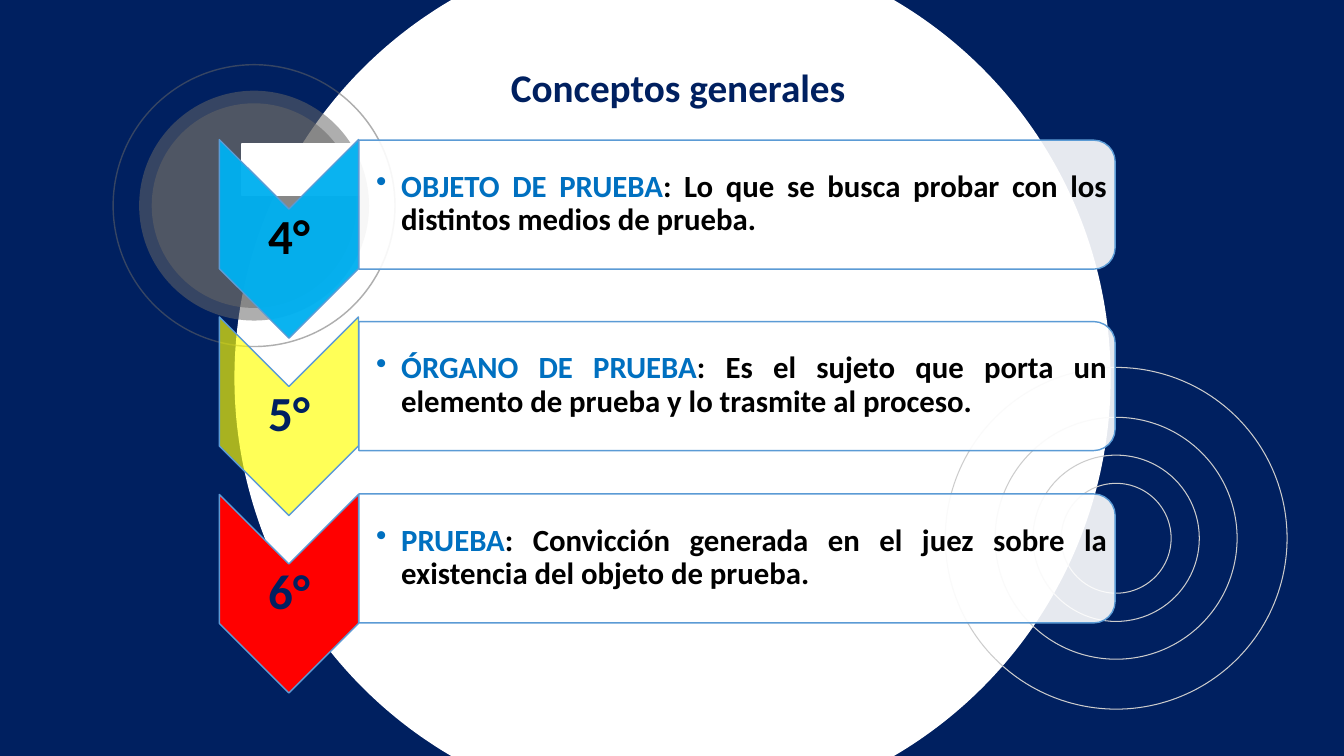
import pptx
import pptx.dml.color
import pptx.enum.shapes
import pptx.enum.text
import pptx.oxml
import pptx.oxml.ns
import pptx.util

PX = 9144  # 100 px to the inch

RGB = pptx.dml.color.RGBColor
NAVY = RGB(0x00, 0x20, 0x60)
WHITE = RGB(0xFF, 0xFF, 0xFF)
BLACK = RGB(0x00, 0x00, 0x00)
GRAY = RGB(0x66, 0x66, 0x66)
RING_GRAY = RGB(0xCC, 0xCC, 0xCC)
SKY = RGB(0x00, 0xB0, 0xF0)
YELLOW = RGB(0xFF, 0xFF, 0x00)
RED = RGB(0xFF, 0x00, 0x00)
TERM_BLUE = RGB(0x00, 0x70, 0xC0)
EDGE_BLUE = RGB(0x5B, 0x9B, 0xD5)

KIND = pptx.enum.shapes.MSO_SHAPE
ALIGN = pptx.enum.text.PP_ALIGN
ANCHOR = pptx.enum.text.MSO_ANCHOR

RING_CENTER = (1107, 534)
RING_DIAMETERS = (339, 165, 240, 109)
DISC_CENTER = (252, 204)
DISC_DIAMETERS = (228, 203)
CHEVRON_TOP, CHEVRON_STEP = 168, 176

# number, number colour, chevron colour, opacity, top of the bar, term, meaning
CONCEPTS = (
    ("4°", BLACK, SKY, 96, 139, "OBJETO DE PRUEBA",
     ": Lo que se busca probar con los distintos medios de prueba."),
    ("5°", NAVY, YELLOW, 66, 319, "ÓRGANO DE PRUEBA",
     ": Es el sujeto que porta un elemento de prueba y lo trasmite al proceso."),
    ("6°", NAVY, RED, 100, 490, "PRUEBA",
     ": Convicción generada en el juez sobre la existencia del objeto de prueba."),
)


def px(length):
    return pptx.util.Emu(round(length * PX))


def set_formats(target, formats):
    for name, value in formats.items():
        setattr(target, name, value)


def add_figure(slide, kind, place, fill=None, opacity=100, line=None,
               weight=1, rotation=0):
    figure = slide.shapes.add_shape(kind, *map(px, place))
    figure.shadow.inherit = False
    figure.rotation = rotation
    if fill is None:
        figure.fill.background()
    else:
        figure.fill.solid()
        figure.fill.fore_color.rgb = fill
    if opacity < 100:
        color = figure.fill._xPr.find(".//" + pptx.oxml.ns.qn("a:srgbClr"))
        alpha = pptx.oxml.parse_xml(
            f'<a:alpha {pptx.oxml.ns.nsdecls("a")} val="{opacity * 1000}"/>')
        color.append(alpha)
    if line is None:
        figure.line.fill.background()
    else:
        figure.line.color.rgb = line
        figure.line.width = pptx.util.Pt(weight)
    return figure


def add_circle(slide, center, diameter, kind=KIND.OVAL, **look):
    left, top = (middle - diameter / 2 for middle in center)
    return add_figure(slide, kind, (left, top, diameter, diameter), **look)


def add_text(slide, place, spans, size, align, anchor, margins):
    """Add one bold paragraph; spans are (text, colour) pairs."""
    box = slide.shapes.add_textbox(*map(px, place))
    left, top, right, bottom = map(px, margins)
    set_formats(box.text_frame, {
        "word_wrap": True, "vertical_anchor": anchor, "margin_left": left,
        "margin_top": top, "margin_right": right, "margin_bottom": bottom})
    para = box.text_frame.paragraphs[0]
    set_formats(para, {"alignment": align, "line_spacing": 0.9})
    for text, color in spans:
        span = para.add_run()
        span.text = text
        set_formats(span.font, {"name": "Calibri", "bold": True,
                                "size": pptx.util.Pt(size)})
        span.font.color.rgb = color
    return para


def add_bullet(para, indent):
    properties = para._p.get_or_add_pPr()
    properties.set("marL", str(px(indent)))
    properties.set("indent", str(-px(indent)))
    properties.append(pptx.oxml.parse_xml(
        f'<a:buChar {pptx.oxml.ns.nsdecls("a")} char="•"/>'))


def add_backdrop(slide):
    slide.background.fill.solid()
    slide.background.fill.fore_color.rgb = NAVY
    add_circle(slide, (667, 375), 869, fill=WHITE)
    for diameter in RING_DIAMETERS:
        add_circle(slide, RING_CENTER, diameter, line=RING_GRAY, weight=0.75)
    for diameter in DISC_DIAMETERS:
        add_circle(slide, DISC_CENTER, diameter, fill=GRAY, opacity=53)
    halo = add_circle(slide, DISC_CENTER, 281, kind=KIND.DONUT, fill=GRAY,
                      opacity=53)
    halo.adjustments[0] = 0.005
    add_figure(slide, KIND.RECTANGLE, (240, 143, 116, 51), WHITE, line=WHITE)


def add_concept(slide, chevron_top, concept):
    number, number_color, fill, opacity, bar_top, term, meaning = concept
    add_figure(slide, KIND.CHEVRON, (188, chevron_top, 197, 138), fill,
               opacity, EDGE_BLUE, rotation=90)
    add_text(slide, (218, chevron_top + 39, 138, 59), [(number, number_color)],
             35, ALIGN.CENTER, ANCHOR.MIDDLE, (2, 2, 2, 2))
    # The bar is placed upright, then turned about its centre.
    add_figure(slide, KIND.ROUND_2_SAME_RECTANGLE,
               (667, bar_top + 64 - 375, 128, 750), WHITE, 90, EDGE_BLUE,
               rotation=90)
    para = add_text(slide, (356, bar_top + 6, 744, 115),
                    [(term, TERM_BLUE), (meaning, BLACK)], 22,
                    ALIGN.JUSTIFY, ANCHOR.MIDDLE, (17, 2, 2, 2))
    add_bullet(para, 25)


def main():
    deck = pptx.Presentation()
    set_formats(deck, {"slide_width": px(1333), "slide_height": px(750)})
    slide = deck.slides.add_slide(deck.slide_layouts[6])
    add_backdrop(slide)
    for row, concept in enumerate(CONCEPTS):
        add_concept(slide, CHEVRON_TOP + row * CHEVRON_STEP, concept)
    add_text(slide, (239, -5, 867, 125), [("Conceptos generales", NAVY)], 28,
             ALIGN.CENTER, ANCHOR.BOTTOM, (10, 10, 10, 10))
    deck.save("out.pptx")


if __name__ == "__main__":
    main()
